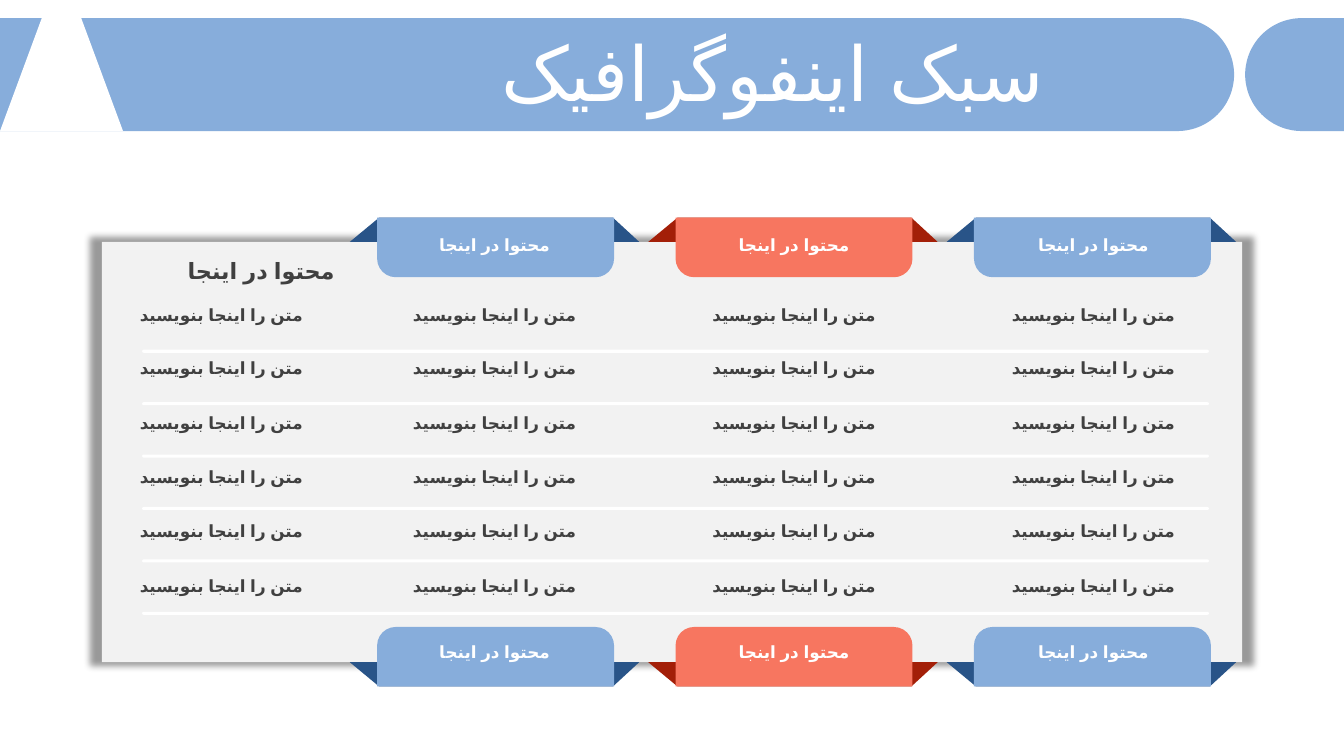
import math

import lxml.etree
import pptx
import pptx.dml.color
import pptx.enum.lang
import pptx.enum.shapes
import pptx.enum.text
import pptx.oxml.ns
import pptx.util

Inches = pptx.util.Inches
SHAPE = pptx.enum.shapes.MSO_SHAPE
ALIGN = pptx.enum.text.PP_ALIGN
ANCHOR = pptx.enum.text.MSO_ANCHOR
qn = pptx.oxml.ns.qn

FONT = "Arial"
WHITE, DARK_TEXT, PANEL_GREY = "FFFFFF", "404040", "F2F2F2"
BLUE, DARK_BLUE = "87ADDB", "295488"
CORAL, DARK_RED = "F77660", "A31F08"
NO_TABLE_STYLE = "{2D5ABB26-0587-4C30-8999-92F81FD0307C}"

TITLE = "سبک اینفوگرافیک"
HEADING = "محتوا در اینجا"
BODY = "متن را اینجا بنویسید"
TEXT_ROWS = 6
TAB_COLOURS = [(BLUE, DARK_BLUE), (CORAL, DARK_RED), (BLUE, DARK_BLUE)]


def rgb(colour):
    return pptx.dml.color.RGBColor.from_string(colour)


def paint(shape, colour):
    shape.shadow.inherit = False
    shape.fill.solid()
    shape.fill.fore_color.rgb = rgb(colour)
    shape.line.fill.background()


def add_preset(slide, kind, left, top, width, height, colour):
    shape = slide.shapes.add_shape(
        kind, Inches(left), Inches(top), Inches(width), Inches(height))
    paint(shape, colour)
    return shape


def add_outline(slide, points, colour):
    """Draw a closed polygon through points given in inches."""
    corners = [(Inches(x), Inches(y)) for x, y in points]
    builder = slide.shapes.build_freeform(*corners[0])
    builder.add_line_segments(corners[1:], close=True)
    paint(builder.convert_to_shape(), colour)


def write(text_frame, text, size, colour, bold=False, align=ALIGN.CENTER):
    """Fill the first paragraph with right-to-left Persian text."""
    paragraph = text_frame.paragraphs[0]
    paragraph.text = text
    paragraph.alignment = align
    paragraph._p.get_or_add_pPr().set("rtl", "1")
    font = paragraph.font
    font.name = FONT
    font.size = pptx.util.Pt(size)
    font.bold = bold
    font.color.rgb = rgb(colour)
    run_font = paragraph.runs[0].font
    run_font.language_id = pptx.enum.lang.MSO_LANGUAGE_ID.FARSI
    lxml.etree.SubElement(run_font._element, qn("a:cs"), typeface=FONT,
                          pitchFamily="34", charset="0")
    return paragraph


def add_half_pill(slide, flat_x, round_x, top, height):
    """Band with a straight end at flat_x and a semicircular end at round_x."""
    radius = height / 2
    direction = 1 if round_x > flat_x else -1
    centre_x = round_x - direction * radius
    angles = [math.radians(degrees) for degrees in range(-90, 91, 3)]
    arc = [(centre_x + direction * radius * math.cos(angle),
            top + radius + radius * math.sin(angle)) for angle in angles]
    add_outline(slide, [(flat_x, top), *arc, (flat_x, top + height)], BLUE)


def add_title_band(slide, top, height, slide_width):
    add_half_pill(slide, 0, 12.24, top, height)
    add_half_pill(slide, slide_width, 12.35, top, height)
    emblem = add_preset(slide, SHAPE.TRAPEZOID, 0, top, 1.22, height, WHITE)
    emblem.adjustments[0] = 0.37

    title = slide.shapes.title
    title.left, title.top = Inches(2.32), Inches(top + 0.19)
    title.width, title.height = Inches(10.69), Inches(0.79)
    text_frame = title.text_frame
    text_frame.word_wrap = True
    text_frame.auto_size = pptx.enum.text.MSO_AUTO_SIZE.NONE
    text_frame.vertical_anchor = ANCHOR.MIDDLE
    write(text_frame, TITLE, 54, WHITE).line_spacing = 0.9
    slide.shapes.element.append(title.element)  # bring in front of the band


def add_panel(slide, left, top, width, height):
    """Grey sheet with a soft shadow and white rules under the text rows."""
    panel = add_preset(slide, SHAPE.RECTANGLE, left, top, width, height, PANEL_GREY)
    effects = panel.element.spPr.find(qn("a:effectLst"))
    shadow = lxml.etree.SubElement(
        effects, qn("a:outerShdw"), blurRad=str(pptx.util.Pt(5)),
        sx="102000", sy="102000", algn="ctr", rotWithShape="0")
    shade = lxml.etree.SubElement(shadow, qn("a:srgbClr"), val="000000")
    lxml.etree.SubElement(shade, qn("a:alpha"), val="40000")

    for row in range(TEXT_ROWS):
        rule = add_preset(slide, SHAPE.ROUNDED_RECTANGLE, left + 0.4,
                          top + 1.07 + 0.52 * row, width - 0.73, 0.03, WHITE)
        rule.adjustments[0] = 0.5


def add_tab(slide, left, edge, direction, colour, fold_colour):
    """Tab folded over a panel edge; direction is -1 for the top, 1 for the bottom."""
    width, height, overhang = 2.35, 0.59, 0.24
    outer = edge + direction * overhang
    add_outline(slide, [(left - 0.27, edge), (left + 0.02, outer),
                        (left + width - 0.01, outer), (left + width + 0.25, edge)],
                fold_colour)
    top = outer if direction < 0 else outer - height
    tab = add_preset(slide, SHAPE.ROUND_2_SAME_RECTANGLE, left, top, width, height, colour)
    tab.adjustments[0] = 0.312
    if direction < 0:
        tab.rotation = 180


def add_tabs(slide, left, top, bottom):
    for column, (colour, fold_colour) in enumerate(TAB_COLOURS):
        for edge, direction in ((top, -1), (bottom, 1)):
            add_tab(slide, left + 2.96 * column, edge, direction, colour, fold_colour)


def add_text_table(slide, left, top):
    widths = [2.45] + [2.97] * len(TAB_COLOURS)
    heights = [0.86, 0.52] + [0.54] * (TEXT_ROWS - 1) + [0.78]
    table = slide.shapes.add_table(
        len(heights), len(widths), Inches(left), Inches(top),
        Inches(sum(widths)), Inches(sum(heights))).table
    table.first_row = table.horz_banding = False
    table._tbl.tblPr.find(qn("a:tableStyleId")).text = NO_TABLE_STYLE
    for column, width in zip(table.columns, widths):
        column.width = Inches(width)
    for row, height in zip(table.rows, heights):
        row.height = Inches(height)

    last_row = len(heights) - 1
    for row in range(len(heights)):
        for column in range(len(widths)):
            cell = table.cell(row, column)
            cell.fill.background()
            cell.vertical_anchor = ANCHOR.MIDDLE
            if 0 < row < last_row:
                write(cell.text_frame, BODY, 12, DARK_TEXT, bold=True)
            elif column > 0:
                write(cell.text_frame, HEADING, 12, WHITE, bold=True)
            elif row == 0:
                cell.vertical_anchor = ANCHOR.BOTTOM
                write(cell.text_frame, HEADING, 16, DARK_TEXT, True, ALIGN.RIGHT)


def main():
    presentation = pptx.Presentation()
    presentation.slide_width = Inches(13.33)
    presentation.slide_height = Inches(7.5)
    slide = presentation.slides.add_slide(presentation.slide_layouts[5])
    add_title_band(slide, 0.18, 1.12, 13.33)
    add_panel(slide, 1.01, 2.4, 11.31, 4.17)
    add_tabs(slide, 3.74, 2.4, 6.57)
    add_text_table(slide, 0.97, 2.01)
    presentation.save("out.pptx")


if __name__ == "__main__":
    main()
